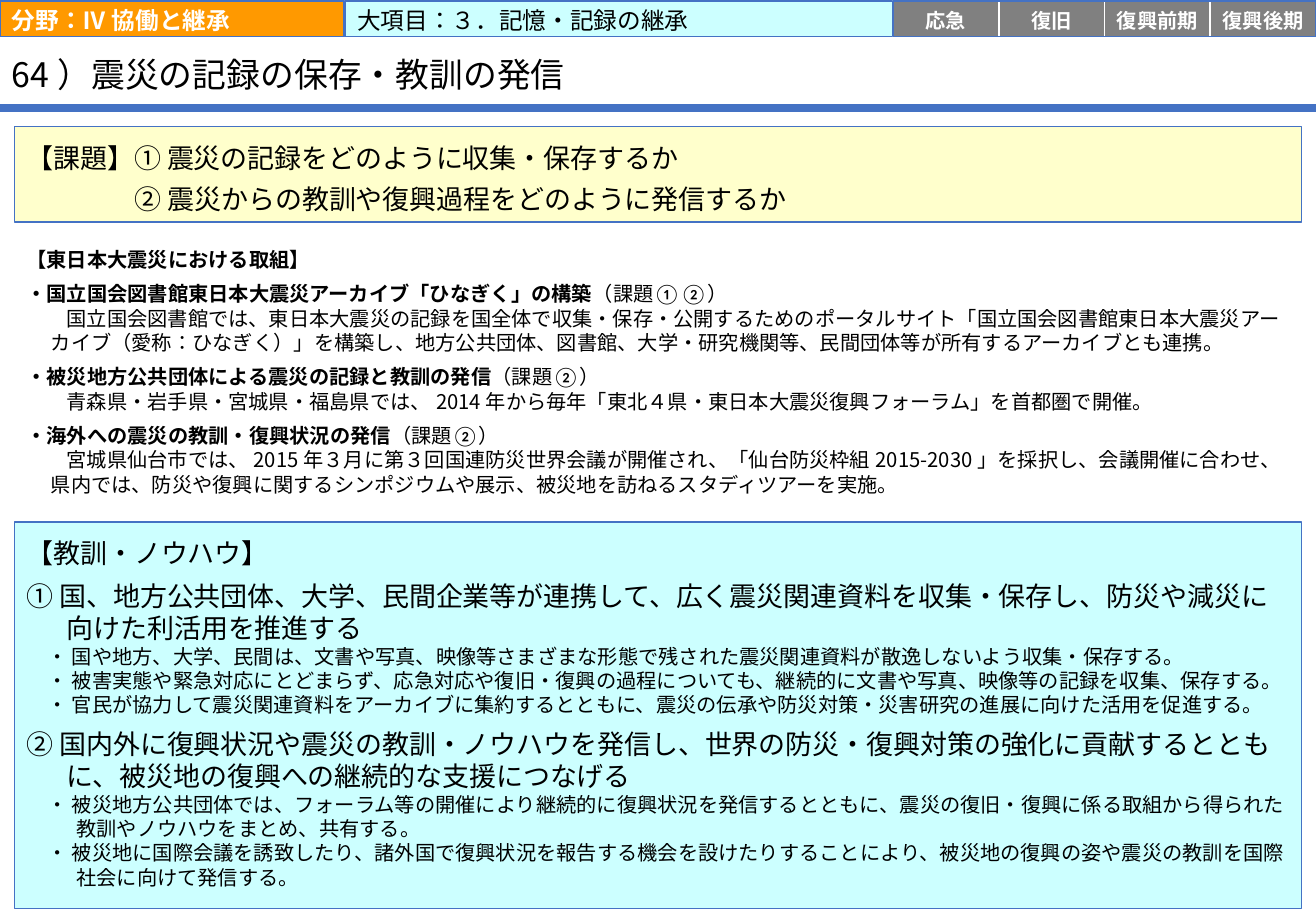
import pptx
import pptx.util
import pptx.dml.color
import pptx.enum.lang
import pptx.enum.shapes
import pptx.enum.text
import pptx.oxml.ns
import lxml.etree

Inches = pptx.util.Inches
Pt = pptx.util.Pt
qn = pptx.oxml.ns.qn
ANCHOR = pptx.enum.text.MSO_ANCHOR
CENTER = pptx.enum.text.PP_ALIGN.CENTER
NOTO = "Noto Sans CJK JP"
LATIN = "Calibri"

HUES = {"blue": "4472C4", "orange": "FF9900", "cyan": "CCFFFF", "cream": "FFFFCC",
        "gray": "808080", "white": "FFFFFF", "black": "000000"}

FONTS = {
    "title": {"size": Pt(20), "name": NOTO},
    "field": {"size": Pt(14), "name": LATIN, "bold": True},
    "topic": {"size": Pt(14), "name": LATIN},
    "phase": {"size": Pt(12), "name": LATIN, "bold": True},
    "head": {"size": Pt(12), "name": LATIN, "bold": True},
    "tag": {"size": Pt(12), "name": LATIN, "bold": False},
    "body": {"size": Pt(12), "name": NOTO},
    "large": {"size": Pt(16), "name": NOTO},
}

FORMS = {
    "plain": {},
    "title": {"line_spacing": 0.9},
    "center": {"alignment": CENTER},
    "issue": {"line_spacing": Pt(24)},
    "spaced": {"space_before": Pt(6)},
    "lesson": {"space_before": Pt(6)},
}

INDENTS = {"issue two": (0.89, 0), "body": (0.2, 0.13),
           "lesson": (0.33, -0.33), "point": (0.41, -0.24)}


def apply(target, values):
    for key, value in values.items():
        setattr(target, key, value)


class Deck:
    def __init__(self, width, height):
        self.show = pptx.Presentation()
        apply(self.show, {"slide_width": Inches(width), "slide_height": Inches(height)})
        self.slide = self.show.slides.add_slide(self.show.slide_layouts[6])

    def color(self, name):
        return pptx.dml.color.RGBColor.from_string(HUES[name])

    def line(self, start, end, hue, width):
        rule = self.slide.shapes.add_connector(
            pptx.enum.shapes.MSO_CONNECTOR.STRAIGHT, *map(Inches, start + end))
        rule.line.color.rgb = self.color(hue)
        rule.line.width = Pt(width)
        lxml.etree.SubElement(rule._element.spPr, qn("a:effectLst"))

    def box(self, place, fill=None, edge=None):
        shape = self.slide.shapes.add_shape(
            pptx.enum.shapes.MSO_SHAPE.RECTANGLE, *map(Inches, place))
        shape.shadow.inherit = False
        if fill:
            shape.fill.solid()
            shape.fill.fore_color.rgb = self.color(fill)
        else:
            shape.fill.background()
        if edge:
            shape.line.color.rgb = self.color(edge)
            shape.line.width = Pt(1)
        else:
            shape.line.fill.background()
        return shape

    def label(self, place):
        return self.slide.shapes.add_textbox(*map(Inches, place))

    def text(self, shape, paras, inset=(0.1, 0.05, 0.1, 0.05), anchor=ANCHOR.MIDDLE, hue="black"):
        frame = shape.text_frame
        sides = ("margin_left", "margin_top", "margin_right", "margin_bottom")
        apply(frame, dict(zip(sides, map(Inches, inset))))
        apply(frame, {"word_wrap": True, "vertical_anchor": anchor})
        for index, (form, indent, runs) in enumerate(paras):
            para = frame.add_paragraph() if index else frame.paragraphs[0]
            apply(para, {"alignment": pptx.enum.text.PP_ALIGN.LEFT, **FORMS[form]})
            if indent:
                for key, value in zip(("marL", "indent"), INDENTS[indent]):
                    para._p.get_or_add_pPr().set(key, str(Inches(value)))
            for style, words in runs:
                self.run(para, style, words, hue)

    def run(self, para, style, words, hue):
        run = para.add_run()
        run.text = words
        apply(run.font, FONTS[style])
        run.font.language_id = pptx.enum.lang.MSO_LANGUAGE_ID.JAPANESE
        run.font.color.rgb = self.color(hue)
        east = lxml.etree.SubElement(run._r.get_or_add_rPr(), qn("a:ea"))
        east.set("typeface", FONTS[style]["name"])

    def save(self):
        self.show.save("out.pptx")


EFFORTS = [
    ("国立国会図書館東日本大震災アーカイブ「ひなぎく」の構築", "（課題①②）",
     "国立国会図書館では、東日本大震災の記録を国全体で収集・保存・公開するためのポータルサイト「国立国会図書館東日本大震災アーカイブ（愛称：ひなぎく）」を構築し、地方公共団体、図書館、大学・研究機関等、民間団体等が所有するアーカイブとも連携。"),
    ("被災地方公共団体による震災の記録と教訓の発信", "（課題②）",
     "青森県・岩手県・宮城県・福島県では、2014年から毎年「東北４県・東日本大震災復興フォーラム」を首都圏で開催。"),
    ("海外への震災の教訓・復興状況の発信", "（課題②）",
     "宮城県仙台市では、2015年３月に第３回国連防災世界会議が開催され、「仙台防災枠組2015-2030」を採択し、会議開催に合わせ、県内では、防災や復興に関するシンポジウムや展示、被災地を訪ねるスタディツアーを実施。"),
]

LESSONS = [
    ("① 国、地方公共団体、大学、民間企業等が連携して、広く震災関連資料を収集・保存し、防災や減災に向けた利活用を推進する", [
        "国や地方、大学、民間は、文書や写真、映像等さまざまな形態で残された震災関連資料が散逸しないよう収集・保存する。",
        "被害実態や緊急対応にとどまらず、応急対応や復旧・復興の過程についても、継続的に文書や写真、映像等の記録を収集、保存する。",
        "官民が協力して震災関連資料をアーカイブに集約するとともに、震災の伝承や防災対策・災害研究の進展に向けた活用を促進する。"]),
    ("② 国内外に復興状況や震災の教訓・ノウハウを発信し、世界の防災・復興対策の強化に貢献するとともに、被災地の復興への継続的な支援につなげる", [
        "被災地方公共団体では、フォーラム等の開催により継続的に復興状況を発信するとともに、震災の復旧・復興に係る取組から得られた教訓やノウハウをまとめ、共有する。",
        "被災地に国際会議を誘致したり、諸外国で復興状況を報告する機会を設けたりすることにより、被災地の復興の姿や震災の教訓を国際社会に向けて発信する。"]),
]


def main():
    deck = Deck(10.83, 7.5)
    deck.line((0, 0.89), (10.83, 0.89), "blue", 4.5)

    paras = [("plain", None, [("head", "【東日本大震災における取組】")])]
    for head, tag, body in EFFORTS:
        paras.append(("spaced", None, [("head", "・" + head), ("tag", tag)]))
        paras.append(("plain", "body", [("body", body)]))
    deck.text(deck.box((0.12, 1.84, 10.59, 2.44), "white"), paras)

    deck.text(deck.label((0, 0.32, 9.48, 0.58)),
              [("title", None, [("title", "64）震災の記録の保存・教訓の発信")])],
              (0.1, 0.04, 0.1, 0))

    bar = (0.1, 0.02, 0.1, 0)
    deck.text(deck.box((0, 0.01, 2.83, 0.29), "orange", "blue"),
              [("plain", None, [("field", "分野：Ⅳ 協働と継承")])], bar, hue="white")
    deck.text(deck.box((2.84, 0.01, 4.53, 0.29), "cyan", "blue"),
              [("plain", None, [("topic", "大項目：３．記憶・記録の継承")])], bar)

    deck.text(deck.box((0.12, 1.04, 10.59, 0.79), "cream", "blue"), [
        ("issue", None, [("large", "【課題】① 震災の記録をどのように収集・保存するか")]),
        ("issue", "issue two", [("large", "② 震災からの教訓や復興過程をどのように発信するか")]),
    ], (0.1, 0.12, 0.1, 0.12))

    paras = [("plain", None, [("large", "【教訓・ノウハウ】")])]
    for lesson, points in LESSONS:
        paras.append(("lesson", "lesson", [("large", lesson)]))
        paras += [("plain", "point", [("body", "・ " + point)]) for point in points]
    deck.text(deck.box((0.12, 4.3, 10.59, 3.18), "cyan", "blue"), paras,
              (0.1, 0.12, 0.1, 0), ANCHOR.TOP)

    left, step = 7.35, 0.87
    phases = ("応急", "復旧", "復興前期", "復興後期")
    for index, phase in enumerate(phases):
        deck.text(deck.box((left + index * step, 0.01, step, 0.29), "gray", "white"),
                  [("center", None, [("phase", phase)])], (0, 0.02, 0, 0), hue="white")
    deck.box((left, 0.01, step * len(phases), 0.29), edge="blue")
    deck.save()


if __name__ == "__main__":
    main()
